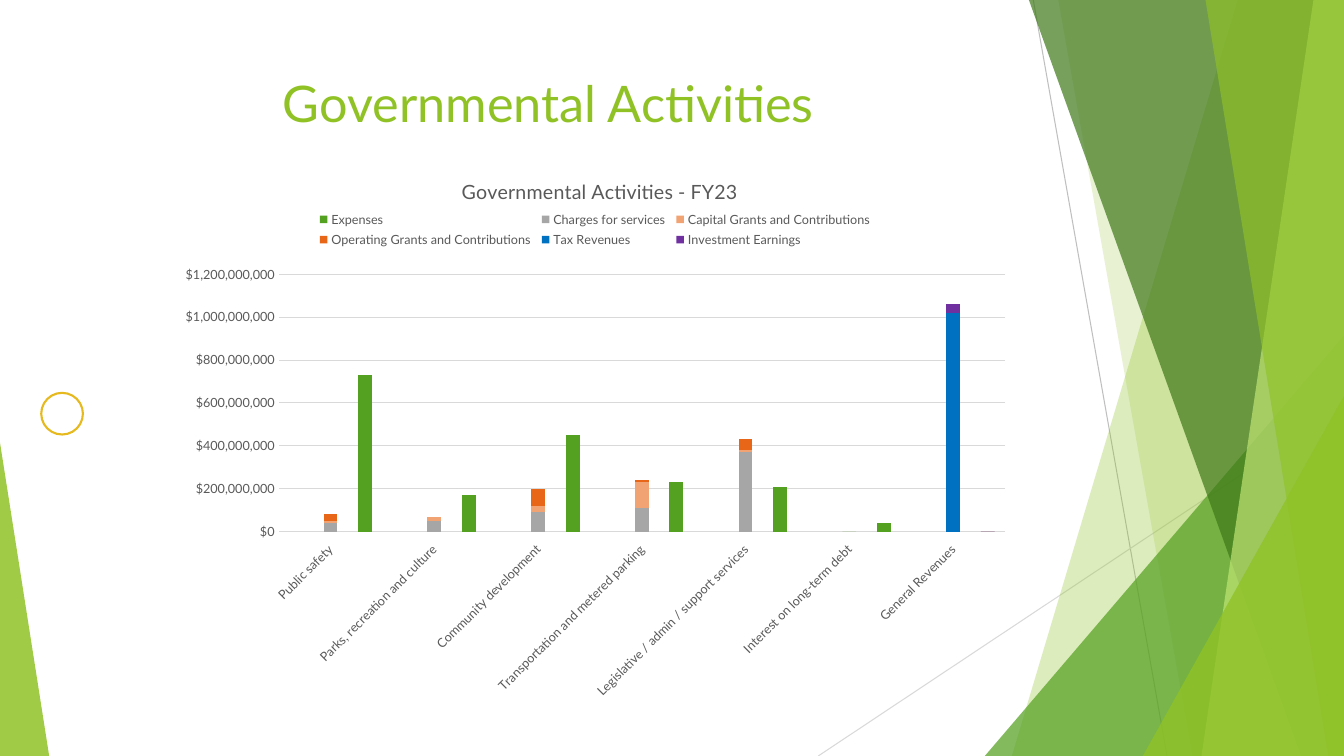
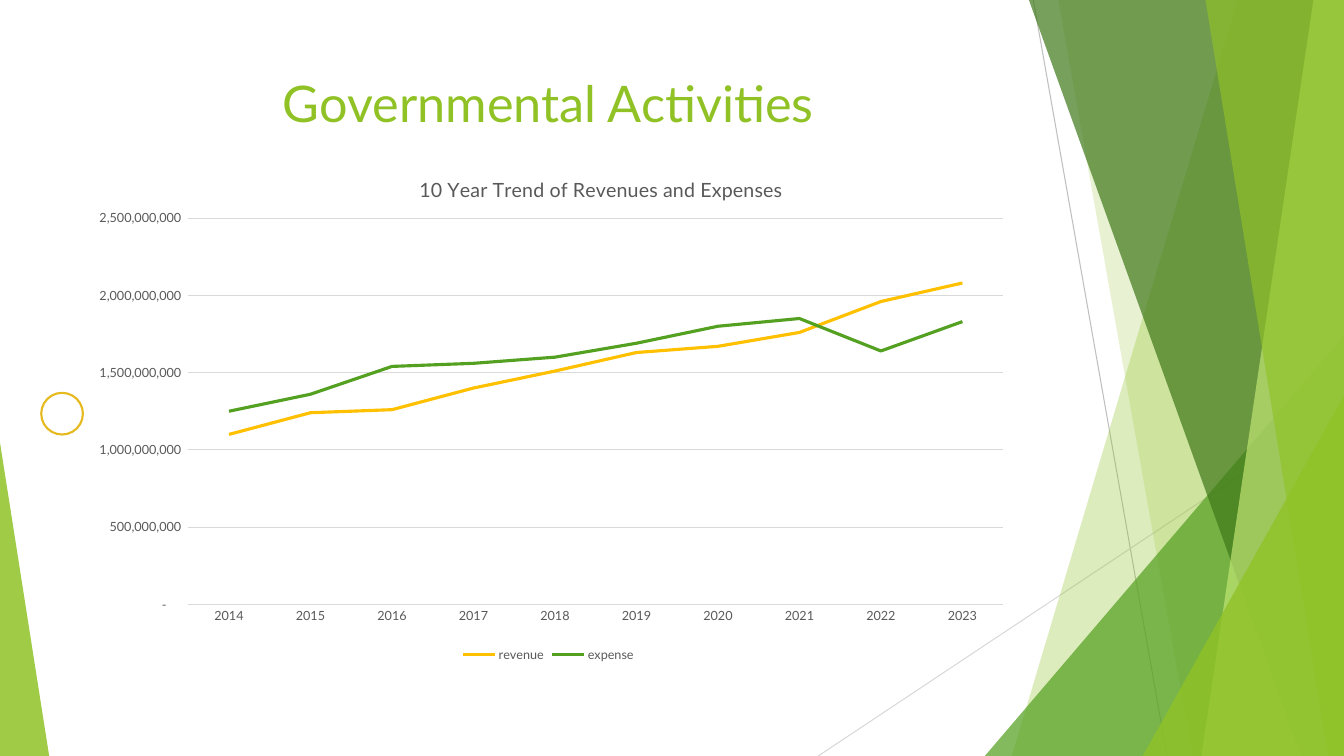
from lxml import etree
from pptx import Presentation
from pptx.chart.data import CategoryChartData
from pptx.dml.color import RGBColor
from pptx.enum import chart as ch, shapes, text
from pptx.oxml import ns
from pptx.util import Cm, Pt

WIDTH, HEIGHT = 33.87, 19.05
FONT = "Lato"
LIME = RGBColor(0x90, 0xC2, 0x26)
PALE_LIME = RGBColor(0xC0, 0xE4, 0x74)
GREEN = RGBColor(0x54, 0xA0, 0x21)
DARK_GREEN = RGBColor(0x3F, 0x78, 0x19)
GOLD = RGBColor(0xE6, 0xB9, 0x1E)
YELLOW = RGBColor(0xFF, 0xC0, 0x00)
PEACH = RGBColor(0xF1, 0xA3, 0x74)
ORANGE = RGBColor(0xE7, 0x66, 0x18)
BLUE = RGBColor(0x00, 0x70, 0xC0)
PURPLE = RGBColor(0x70, 0x30, 0xA0)
TEXT_GREY = RGBColor(0x59, 0x59, 0x59)
MID_GREY = RGBColor(0xA6, 0xA6, 0xA6)
LINE_GREY = RGBColor(0xBF, 0xBF, 0xBF)
GRID_GREY = RGBColor(0xD9, 0xD9, 0xD9)

MILLION = 1_000_000
PROGRAMMES = [
    "Public safety", "Parks, recreation and culture", "Community development",
    "Transportation and metered parking", "Legislative / admin / support services",
    "Interest on long-term debt", "General Revenues",
]
# Each programme takes three slots: a gap, its revenues, its expenses.
SLOTS = [label for name in PROGRAMMES for label in ("", name, "")]
# Series name: (colour, {slot: millions of dollars})
ACTIVITIES = {
    "Expenses": (GREEN, {2: 730, 5: 170, 8: 450, 11: 230, 14: 210, 16: 0, 17: 40}),
    "Charges for services": (MID_GREY, {1: 40, 4: 50, 7: 90, 10: 110, 13: 370}),
    "Capital Grants and Contributions": (
        PEACH, {1: 10, 4: 20, 7: 30, 10: 120, 13: 10, 19: 0, 20: 0}),
    "Operating Grants and Contributions": (
        ORANGE, {1: 30, 4: 0, 7: 80, 10: 10, 13: 50, 19: 0, 20: 0}),
    "Tax Revenues": (BLUE, {19: 1020, 20: 0}),
    "Investment Earnings": (PURPLE, {19: 40, 20: 0}),
}
YEARS = [str(year) for year in range(2014, 2024)]
TREND = {
    "revenue": (YELLOW, [1100, 1240, 1260, 1400, 1510, 1630, 1670, 1760, 1960, 2080]),
    "expense": (GREEN, [1250, 1360, 1540, 1560, 1600, 1690, 1800, 1850, 1640, 1830]),
}


def apply(target, **values):
    for name, value in values.items():
        setattr(target, name, value)


def style_font(font, size, color):
    apply(font, name=FONT, size=Pt(size), bold=False)
    font.color.rgb = color


def style_line(line, color, width=0.75):
    line.color.rgb = color
    line.width = Pt(width)


def paint(shape, color, opacity):
    shape.shadow.inherit = False
    shape.fill.solid()
    shape.fill.fore_color.rgb = color
    shape.line.fill.background()
    rgb = shape.element.spPr.find(".//" + ns.qn("a:srgbClr"))
    etree.SubElement(rgb, ns.qn("a:alpha"), val=str(opacity * 1000))
    return shape


def add_ray(slide, start, end, color):
    ray = slide.shapes.add_connector(
        shapes.MSO_CONNECTOR.STRAIGHT, *(Cm(v) for v in (*start, *end)))
    style_line(ray.line, color)
    etree.SubElement(ray.element.spPr, ns.qn("a:effectLst"))
    return ray


def add_facet(slide, top_x, bottom_x, color, opacity):
    """Full-height band from a slanted left edge to the right edge of the slide."""
    outline = slide.shapes.build_freeform(Cm(top_x), 0)
    corners = [(WIDTH, 0), (WIDTH, HEIGHT), (bottom_x, HEIGHT)]
    outline.add_line_segments([(Cm(x), Cm(y)) for x, y in corners], close=True)
    return paint(outline.convert_to_shape(), color, opacity)


def add_corner(slide, left, top, width, apex, color, opacity):
    """Right triangle that stands on the bottom edge of the slide."""
    corner = slide.shapes.add_shape(
        shapes.MSO_SHAPE.ISOSCELES_TRIANGLE,
        Cm(left), Cm(top), Cm(width), Cm(HEIGHT - top))
    corner.adjustments[0] = apex
    return paint(corner, color, opacity)


def add_emblem(slide):
    ring = slide.shapes.add_shape(
        shapes.MSO_SHAPE.OVAL, Cm(1.04), Cm(9.9), Cm(1.05), Cm(1.05))
    ring.shadow.inherit = False
    ring.fill.background()
    style_line(ring.line, GOLD, 1.5)
    return ring


def decorate_layout(layout, slide):
    """Draw the shared backdrop on the slide, then move it to the layout."""
    for holder in list(layout.placeholders)[1:]:
        layout.shapes.element.remove(holder.element)
    backdrop = [
        add_ray(slide, (26.04, 0), (29.41, HEIGHT), LINE_GREY),
        add_ray(slide, (WIDTH, 10.24), (20.62, HEIGHT), GRID_GREY),
        add_facet(slide, 31.19, 25.5, LIME, 30),
        add_facet(slide, 26.67, 30.05, LIME, 20),
        add_corner(slide, 24.82, 8.46, WIDTH - 24.82, 1, GREEN, 72),
        add_facet(slide, 25.93, 32.79, DARK_GREEN, 70),
        add_facet(slide, 33.1, 30.28, PALE_LIME, 70),
        add_facet(slide, 30.38, 33.48, LIME, 65),
        add_corner(slide, 28.8, 9.98, WIDTH - 28.8, 1, LIME, 80),
        add_corner(slide, 0, 11.15, 1.24, 0, LIME, 85),
        add_emblem(slide),
    ]
    for part in backdrop:
        layout.shapes.element.append(part.element)


def add_titled_slide(prs, layout, heading):
    slide = prs.slides.add_slide(layout)
    title = slide.shapes.title
    apply(title, left=Cm(1.88), top=Cm(1.7), width=Cm(23.88), height=Cm(2.11))
    title.text_frame.text = heading
    title.text_frame.vertical_anchor = text.MSO_ANCHOR.TOP
    paragraph = title.text_frame.paragraphs[0]
    paragraph.alignment = text.PP_ALIGN.CENTER
    style_font(paragraph.runs[0].font, 36, LIME)
    return slide


def place(part, index, **fractions):
    """Fix a chart part at x, y, w, h, as fractions of the chart area."""
    for old in part.findall(ns.qn("c:layout")):
        part.remove(old)
    layout = etree.Element(ns.qn("c:layout"))
    manual = etree.SubElement(layout, ns.qn("c:manualLayout"))
    if index == 0:
        etree.SubElement(manual, ns.qn("c:layoutTarget"), val="inner")
    for key in "xy":
        etree.SubElement(manual, ns.qn(f"c:{key}Mode"), val="edge")
    for key, value in fractions.items():
        etree.SubElement(manual, ns.qn(f"c:{key}"), val=str(value))
    part.insert(index, layout)


def add_chart(slide, kind, box, categories, series, heading, heading_x, plot_box):
    data = CategoryChartData()
    data.categories = categories
    for name, (_, values) in series.items():
        data.add_series(name, [None if v is None else v * MILLION for v in values])
    chart = slide.shapes.add_chart(kind, *(Cm(v) for v in box), data).chart
    style_font(chart.font, 9, TEXT_GREY)

    chart.has_title = True
    chart.chart_title.text_frame.text = heading
    style_font(chart.chart_title.text_frame.paragraphs[0].runs[0].font, 14, TEXT_GREY)
    place(chart.element.chart.find(ns.qn("c:title")), 1, x=heading_x, y=0.04)
    place(chart.element.chart.plotArea, 0, **plot_box)

    chart.has_legend = True
    chart.legend.include_in_layout = False
    style_font(chart.legend.font, 9, TEXT_GREY)
    chart.plots[0].vary_by_categories = False
    for axis in (chart.category_axis, chart.value_axis):
        apply(axis, major_tick_mark=ch.XL_TICK_MARK.NONE,
              minor_tick_mark=ch.XL_TICK_MARK.NONE)
        style_font(axis.tick_labels.font, 9, TEXT_GREY)
    chart.value_axis.format.line.fill.background()
    style_line(chart.value_axis.major_gridlines.format.line, GRID_GREY)
    return chart


def scale_values(axis, top, step, number_format):
    apply(axis, minimum_scale=0, maximum_scale=top * MILLION, major_unit=step * MILLION)
    apply(axis.tick_labels, number_format=number_format, number_format_is_linked=False)


def add_activities_chart(slide):
    series = {name: (color, [amounts.get(slot) for slot in range(len(SLOTS))])
              for name, (color, amounts) in ACTIVITIES.items()}
    chart = add_chart(
        slide, ch.XL_CHART_TYPE.COLUMN_STACKED, (4.22, 3.81, 21.54, 14.1), SLOTS, series,
        "Governmental Activities - FY23", 0.34, dict(x=0.13, y=0.22, w=0.85, h=0.46))
    apply(chart.plots[0], gap_width=150, overlap=100)
    for bars, (color, _) in zip(chart.plots[0].series, series.values()):
        bars.format.fill.solid()
        bars.format.fill.fore_color.rgb = color
    scale_values(chart.value_axis, 1200, 200, '"$"#,##0')

    chart.category_axis.tick_label_position = ch.XL_TICK_LABEL_POSITION.LOW
    chart.category_axis.format.line.fill.background()
    labels = chart.element.chart.plotArea.find(ns.qn("c:catAx")).get_or_add_txPr()
    labels.find(ns.qn("a:bodyPr")).set("rot", str(-45 * 60000))
    chart.legend.position = ch.XL_LEGEND_POSITION.TOP
    place(chart.element.chart.find(ns.qn("c:legend")), 1, x=0.17, y=0.1, w=0.66, h=0.08)


def add_trend_chart(slide):
    chart = add_chart(
        slide, ch.XL_CHART_TYPE.LINE, (1.88, 3.81, 23.88, 12.98), YEARS, TREND,
        "10 Year Trend of Revenues and Expenses", 0.36,
        dict(x=0.12, y=0.13, w=0.86, h=0.75))
    for curve, (color, _) in zip(chart.plots[0].series, TREND.values()):
        curve.smooth = False
        style_line(curve.format.line, color, 2.25)
    scale_values(chart.value_axis, 2500, 500,
                 r'_(* #,##0_);_(* \(#,##0\);_(* "-"??_);_(')
    style_line(chart.category_axis.format.line, GRID_GREY)
    chart.legend.position = ch.XL_LEGEND_POSITION.BOTTOM


def main():
    prs = Presentation()
    apply(prs, slide_width=Cm(WIDTH), slide_height=Cm(HEIGHT))
    layout = prs.slide_layouts.get_by_name("Title Only")
    activities, trend = (
        add_titled_slide(prs, layout, "Governmental Activities") for _ in range(2))
    decorate_layout(layout, activities)
    add_activities_chart(activities)
    add_trend_chart(trend)
    prs.save("out.pptx")


if __name__ == "__main__":
    main()
